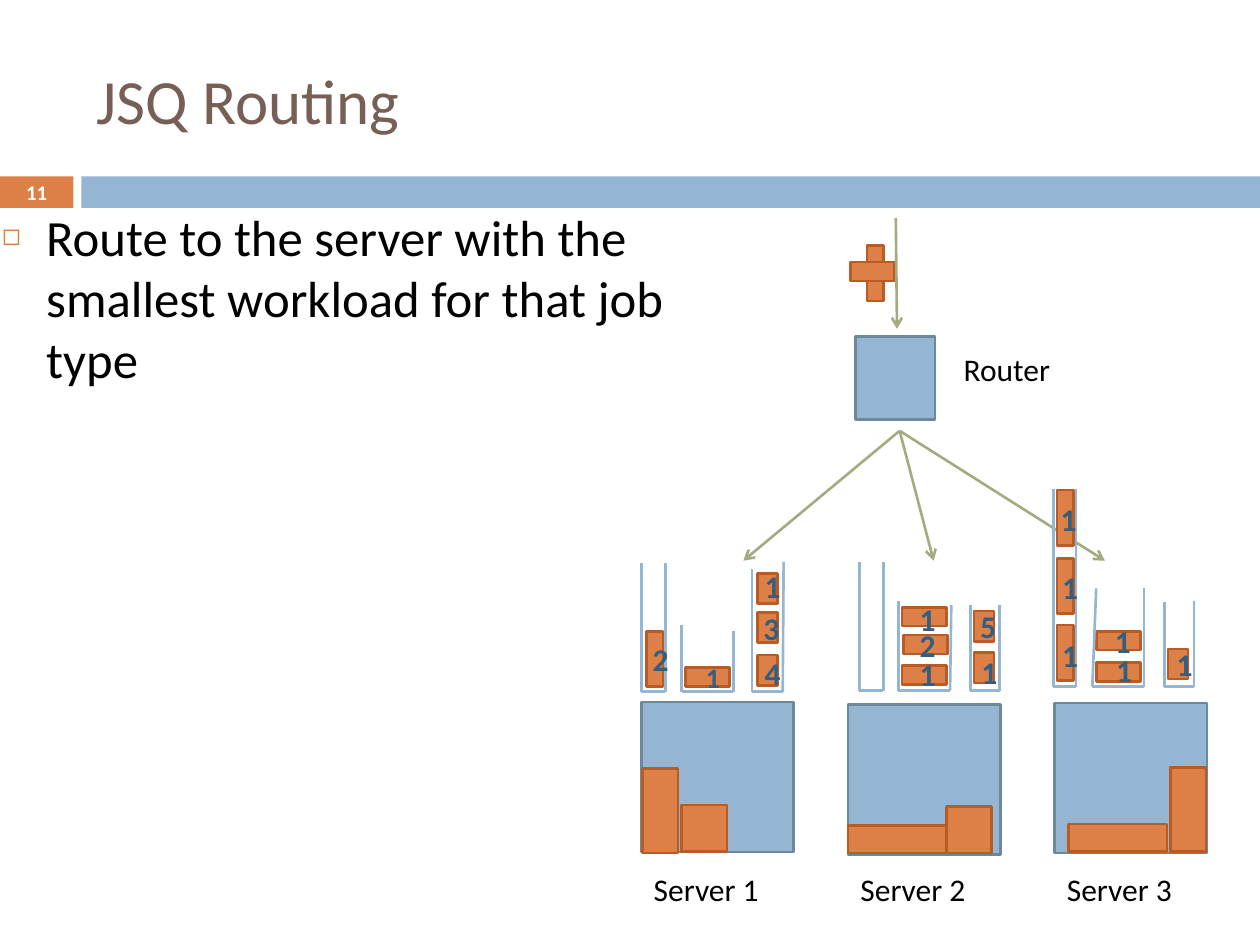
"""Build a slide on routing jobs to the server with the shortest queue."""
from lxml.etree import SubElement
from pptx import Presentation
from pptx.dml.color import RGBColor
from pptx.enum.shapes import MSO_CONNECTOR as Link, MSO_SHAPE as Preset
from pptx.enum.text import MSO_ANCHOR as Anchor, MSO_AUTO_SIZE as Fit, PP_ALIGN as Align
from pptx.oxml.ns import qn
from pptx.util import Pt


class Theme:
    font = "Calibri"
    orange, orange_edge = "DD8047", "B95B22"
    blue, blue_edge = "94B6D2", "6D879B"
    olive, brown, navy = "A5AB81", "775F55", "355D7E"
    black, white = "000000", "FFFFFF"
    title_size, body_size, label_size = 36, 29, 18
    small_label_size, number_size = 16, 11.9
    stroke = 1.5


def add_block(left, top, width, height, fill, edge=None):
    block = slide.shapes.add_shape(
        Preset.RECTANGLE, Pt(left), Pt(top), Pt(width), Pt(height))
    block.shadow.inherit = False
    block.fill.solid()
    block.fill.fore_color.rgb = RGBColor.from_string(fill)
    if edge:
        block.line.color.rgb = RGBColor.from_string(edge)
        block.line.width = Pt(Theme.stroke)
    else:
        block.line.fill.background()


def add_line(start, end, color, arrow=False):
    line = slide.shapes.add_connector(
        Link.STRAIGHT, Pt(start[0]), Pt(start[1]), Pt(end[0]), Pt(end[1]))
    line.line.color.rgb = RGBColor.from_string(color)
    line.line.width = Pt(Theme.stroke)
    if arrow:
        SubElement(line.line._get_or_add_ln(), qn("a:tailEnd"), type="arrow")
    SubElement(line._element.spPr, qn("a:effectLst"))


deck = Presentation()
deck.slide_width, deck.slide_height = Pt(720), Pt(540)
slide = deck.slides.add_slide(deck.slide_layouts[1])

add_block(0, 100.8, 42, 18, Theme.orange)
add_block(46.5, 100.8, 673.5, 18, Theme.blue)

title, body = slide.placeholders
title.left, title.top, title.width, title.height = Pt(48.2), Pt(18), Pt(642), Pt(78)
body.left, body.top, body.width, body.height = Pt(-6), Pt(113.8), Pt(412), Pt(438.5)
for placeholder, wording, size, color, anchor in (
    (title, "JSQ Routing", Theme.title_size, Theme.brown, Anchor.MIDDLE),
    (body, "Route to the server with the smallest workload for that job type",
     Theme.body_size, Theme.black, Anchor.TOP),
):
    frame = placeholder.text_frame
    frame.auto_size = Fit.NONE
    frame.vertical_anchor = anchor
    frame.paragraphs[0].alignment = Align.LEFT
    run = frame.paragraphs[0].add_run()
    run.text = wording
    run.font.name, run.font.size = Theme.font, Pt(size)
    run.font.color.rgb = RGBColor.from_string(color)

point = body.text_frame.paragraphs[0]
point.space_before = Pt(7)
bullet = point._p.get_or_add_pPr()
bullet.set("marL", str(Pt(25.2)))
bullet.set("indent", str(-Pt(25.2)))
SubElement(SubElement(bullet, qn("a:buClr")), qn("a:srgbClr"), val=Theme.orange)
SubElement(bullet, qn("a:buSzPct"), val="60000")
SubElement(bullet, qn("a:buChar"), char="◻")

SLIM, FLAT, SMALL = (9.4, 31.7), (25.2, 10.8), (11.5, 17.3)
TALL, SQUARE, WIDE = (20.2, 48.2), (25.9, 26.6), (56.2, 15.8)

for left, top, size in ((495.4, 140.4, SLIM), (486, 149.8, FLAT)):
    add_block(left, top, *size, Theme.orange, Theme.orange_edge)
add_line((511.9, 124.6), (512.6, 187.9), Theme.olive, arrow=True)
add_block(488.9, 192.2, 45.4, 47.5, Theme.blue, Theme.blue_edge)
for target in (424.8, 533.5, 631.4):
    add_line((514.1, 246.2), (target, 320.4), Theme.olive, arrow=True)

# Server: name, left, top, running jobs, queue floor, queues.
# Queue: left rim, left foot, right foot, right rim, job size, jobs.
# Job: left, top, count, label left, label top.
servers = (
    ("Server 1", 366.5, 401.2,
     ((367.2, 439.2, TALL), (389.5, 460.1, SQUARE)), 395.3, (
         ((366.5, 321.8), 366.5, 380.2, (380.2, 321.8), SLIM,
          ((369.4, 360.7, "2", 365.8, 362.2),)),
         ((389.5, 357.1), 389.5, 419, (419, 360.7), FLAT,
          ((391.7, 381.6, "1", 396.7, 373.7),)),
         ((429.8, 325.4), 429.8, 447.3, (447.8, 321.1), SMALL,
          ((432.7, 374.4, "4", 429.8, 370.1), (432.7, 349.9, "3", 429.1, 344.2),
           (432.7, 327.6, "1", 429.8, 320.4))))),
    ("Server 2", 484.6, 402.5,
     ((484.6, 471.6, WIDE), (540.7, 460.8, SQUARE)), 394.6, (
         ((491, 321.1), 491, 504.7, (504.7, 321.1), SLIM, ()),
         ((513.4, 343.4), 513.4, 542.9, (543.6, 345.6), FLAT,
          ((515.5, 380.2, "1", 518.4, 370.8), (516.2, 362.9, "2", 518.4, 354.2),
           (515.5, 347, "1", 518.4, 339.1))),
         ((554.4, 345.6), 554.4, 571.3, (571.3, 345.6), SMALL,
          ((556.6, 373, "1", 553.7, 369.4), (556.6, 349.2, "5", 553, 343.4))))),
    ("Server 3", 602.6, 401.8,
     ((668.9, 438.5, TALL), (610.6, 470.9, WIDE)), 392.4, (
         ((601.9, 279.4), 601.9, 614.9, (614.9, 279.4), SLIM,
          ((604.1, 357.1, "1", 599.8, 360), (604.1, 319, "1", 599.8, 321.1),
           (604.1, 280.1, "1", 599, 282.2))),
         ((626.4, 336.2), 624.2, 653.8, (653.8, 336.2), FLAT,
          ((626.4, 378.7, "1", 630.7, 368.6), (626.4, 360.7, "1", 630, 352.1))),
         ((665.3, 344.2), 665.3, 682.2, (682.2, 343.4), SMALL,
          ((667.4, 370.8, "1", 665.3, 365),)))),
)

plain = (Theme.label_size, Theme.black, False, Align.LEFT, Anchor.TOP)
count_style = (Theme.label_size, Theme.navy, True, Align.CENTER, Anchor.TOP)
small_count_style = (Theme.small_label_size, *count_style[1:])
number_style = (Theme.number_size, Theme.white, True, Align.CENTER, Anchor.MIDDLE)
labels = [("11", 0, 100.1, 42, 19.4, number_style),
          ("Router", 543.6, 196.6, 88.6, 28, plain)]

for name, left, top, running, floor, queues in servers:
    add_block(left, top, 87.1, 85.7, Theme.blue, Theme.blue_edge)
    for job_left, job_top, size in running:
        add_block(job_left, job_top, *size, Theme.orange, Theme.orange_edge)
    labels.append((name, left, 493.9, 88.6, 28, plain))
    for left_rim, left_foot, right_foot, right_rim, size, jobs in queues:
        for job_left, job_top, count, label_left, label_top in jobs:
            add_block(job_left, job_top, *size, Theme.orange, Theme.orange_edge)
            alone = size == FLAT and len(jobs) == 1
            labels.append((count, label_left, label_top, 13.7 if alone else 18, 28.8,
                           small_count_style if alone else count_style))
        outline = (left_rim, (left_foot, floor), (right_foot, floor), right_rim)
        for start, end in zip(outline, outline[1:]):
            add_line(start, end, Theme.blue)

for wording, left, top, width, height, style in labels:
    size, color, bold, align, anchor = style
    frame = slide.shapes.add_textbox(
        Pt(left), Pt(top), Pt(width), Pt(height)).text_frame
    frame.word_wrap = True
    frame.vertical_anchor = anchor
    frame.paragraphs[0].alignment = align
    run = frame.paragraphs[0].add_run()
    run.text = wording
    run.font.name, run.font.size, run.font.bold = Theme.font, Pt(size), bold
    run.font.color.rgb = RGBColor.from_string(color)

deck.save("out.pptx")
